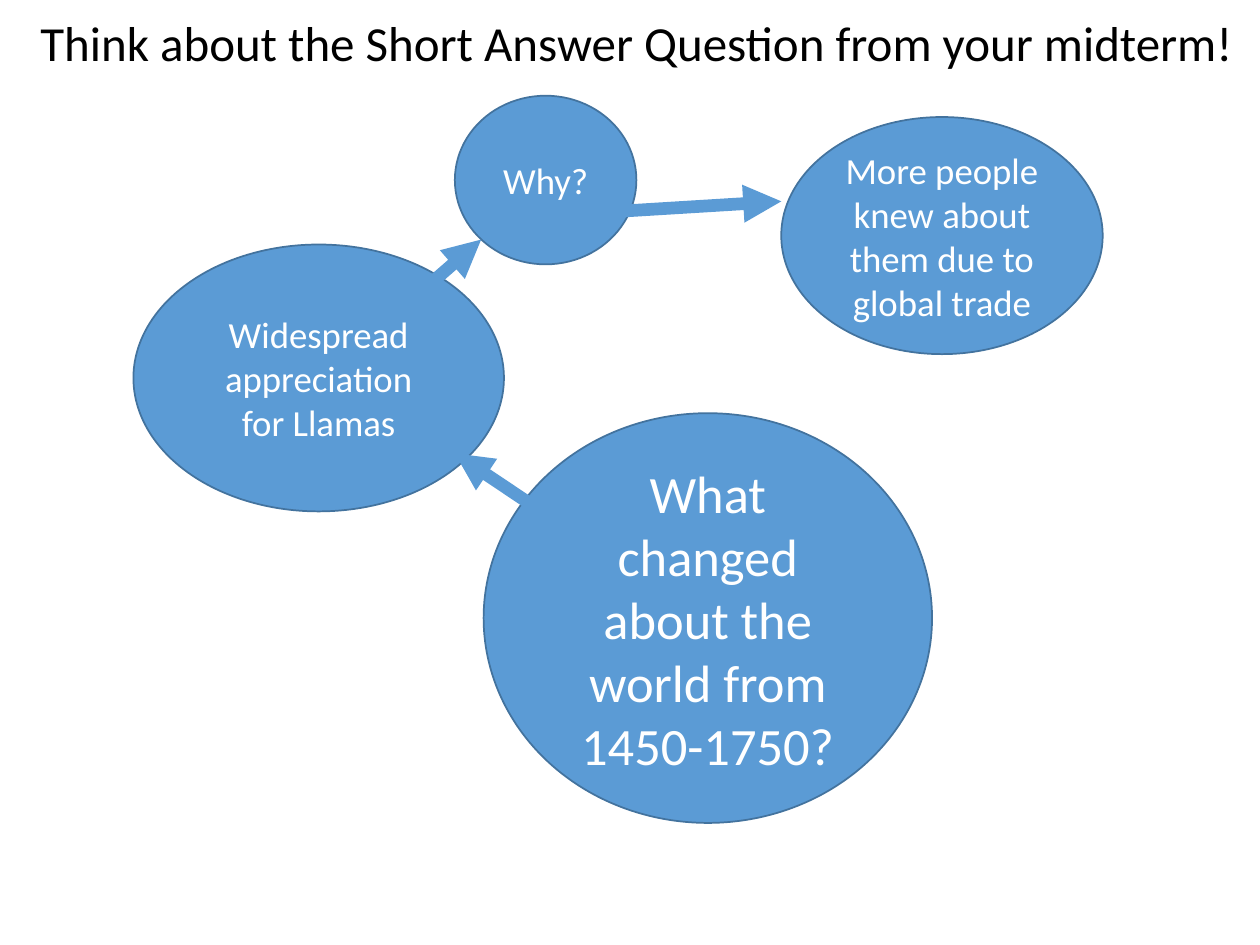
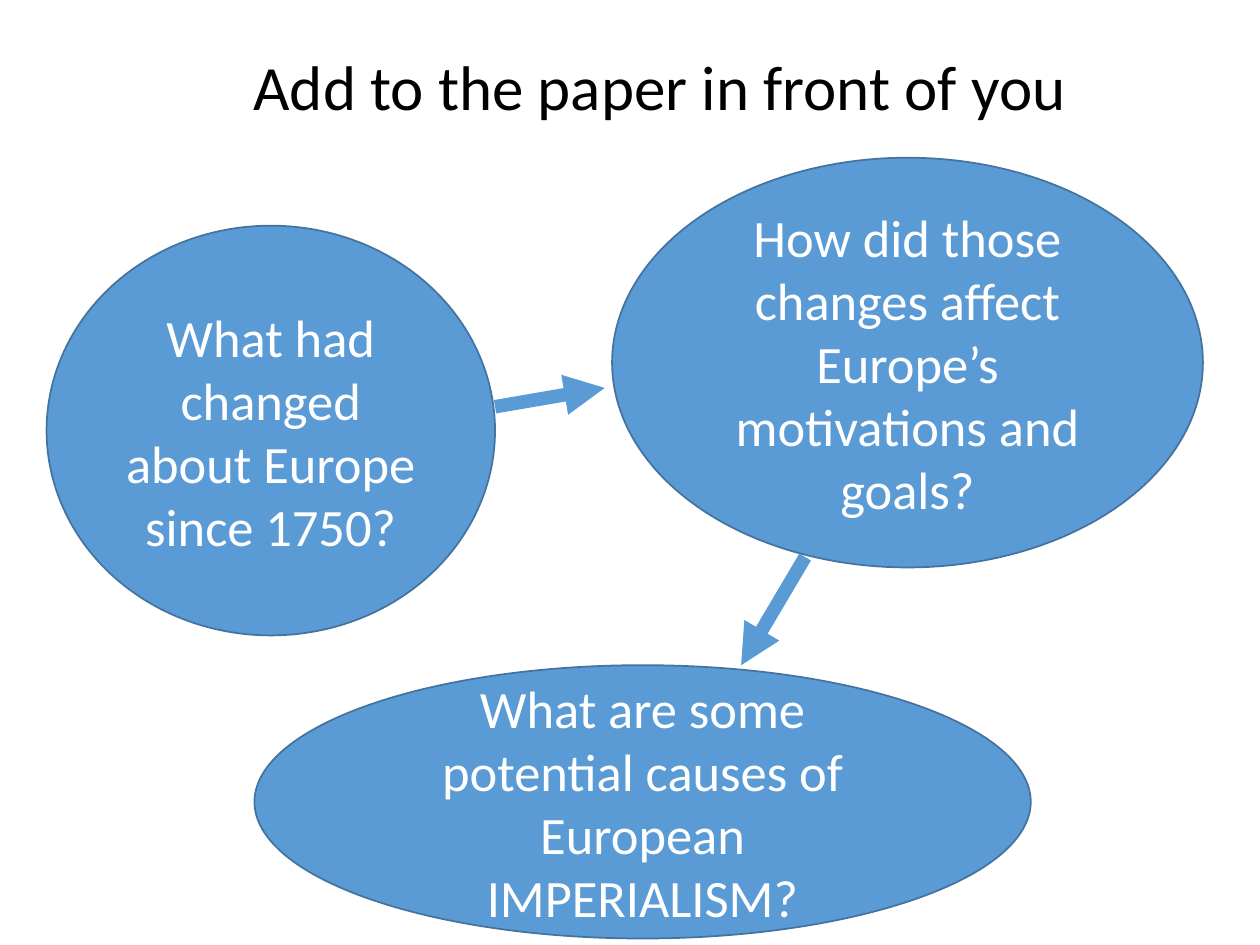
import pptx
import pptx.util
import pptx.dml.color
import pptx.enum.shapes
import pptx.enum.text
import pptx.oxml.ns
from dataclasses import dataclass
from lxml import etree

Cm, Pt = pptx.util.Cm, pptx.util.Pt
RGB = pptx.dml.color.RGBColor.from_string
ALIGN = pptx.enum.text.PP_ALIGN
ANCHOR = pptx.enum.text.MSO_ANCHOR
qn = pptx.oxml.ns.qn


@dataclass(frozen=True)
class Theme:
    font: str = "Calibri"
    title: str = "000000"
    bubble: str = "5B9BD5"
    outline: str = "43739E"
    bubble_text: str = "FFFFFF"
    question: int = 30
    answer: int = 21
    outline_width: float = 1


theme = Theme()


def write(sp, text, size, color, align, anchor, wrap=True):
    tf = sp.text_frame
    tf.word_wrap = wrap
    tf.auto_size = pptx.enum.text.MSO_AUTO_SIZE.NONE
    tf.vertical_anchor = anchor
    p = tf.paragraphs[0]
    p.alignment = align
    r = p.add_run()
    r.text = text
    r.font.name = theme.font
    r.font.size = Pt(size)
    r.font.color.rgb = RGB(color)


# Slide content: boxes are left, top, width, height; arrows run x1, y1 to x2, y2 (cm)
slides = [
    dict(
        title="Think about the Short Answer Question from your midterm!",
        title_box=(0.56, 0.13, 24.84, 1.45), title_size=28,
        title_align=ALIGN.LEFT, title_wrap=False,
        bubbles=[
            ("What changed about the world from 1450-1750?",
             theme.question, (9.75, 8.33, 9.04, 8.26)),
            ("Widespread appreciation for Llamas",
             theme.answer, (2.69, 4.93, 7.47, 5.38)),
            ("Why?", theme.answer, (9.17, 1.93, 3.66, 3.4)),
            ("More people knew about them due to global trade",
             theme.answer, (15.75, 2.36, 6.48, 4.78)),
        ],
        arrow_width=7.25,
        arrows=[(10.62, 10.11, 9.17, 9.14), (8.18, 6.15, 9.7, 4.83),
                (12.32, 4.27, 15.75, 4.06)],
    ),
    dict(
        title="Add to the paper in front of you",
        title_box=(2.34, 0.84, 21.92, 1.8), title_size=36,
        title_align=ALIGN.CENTER, title_wrap=True,
        bubbles=[
            ("What had changed about Europe since 1750?",
             theme.question, (0.94, 4.55, 9.04, 8.26)),
            ("How did those changes affect Europe’s motivations and goals?",
             theme.question, (12.34, 3.18, 11.91, 8.26)),
            ("What are some potential causes of European IMPERIALISM?",
             theme.question, (5.13, 13.41, 15.65, 5.51)),
        ],
        arrow_width=7.75,
        arrows=[(9.98, 8.2, 12.19, 7.82), (16.23, 11.23, 14.94, 13.41)],
    ),
]

prs = pptx.Presentation()
prs.slide_width, prs.slide_height = Cm(25.4), Cm(19.05)
title_only = prs.slide_layouts.get_by_name("Title Only")

for content in slides:
    s = prs.slides.add_slide(title_only)

    # Title
    title = s.shapes.title
    title.left, title.top, title.width, title.height = map(Cm, content["title_box"])
    write(title, content["title"], content["title_size"], theme.title,
          content["title_align"], ANCHOR.TOP, content["title_wrap"])

    # Bubbles
    for text, size, box in content["bubbles"]:
        sp = s.shapes.add_shape(pptx.enum.shapes.MSO_SHAPE.OVAL, *map(Cm, box))
        sp.shadow.inherit = False
        sp.fill.solid()
        sp.fill.fore_color.rgb = RGB(theme.bubble)
        sp.line.color.rgb = RGB(theme.outline)
        sp.line.width = Pt(theme.outline_width)
        write(sp, text, size, theme.bubble_text, ALIGN.CENTER, ANCHOR.MIDDLE)

    # Arrows
    for ends in content["arrows"]:
        arrow = s.shapes.add_connector(
            pptx.enum.shapes.MSO_CONNECTOR.STRAIGHT, *map(Cm, ends))
        arrow.line.color.rgb = RGB(theme.bubble)
        arrow.line.width = Pt(content["arrow_width"])
        props = arrow.element.spPr
        etree.SubElement(props.find(qn("a:ln")), qn("a:tailEnd"), type="triangle")
        etree.SubElement(props, qn("a:effectLst"))

prs.save("out.pptx")
